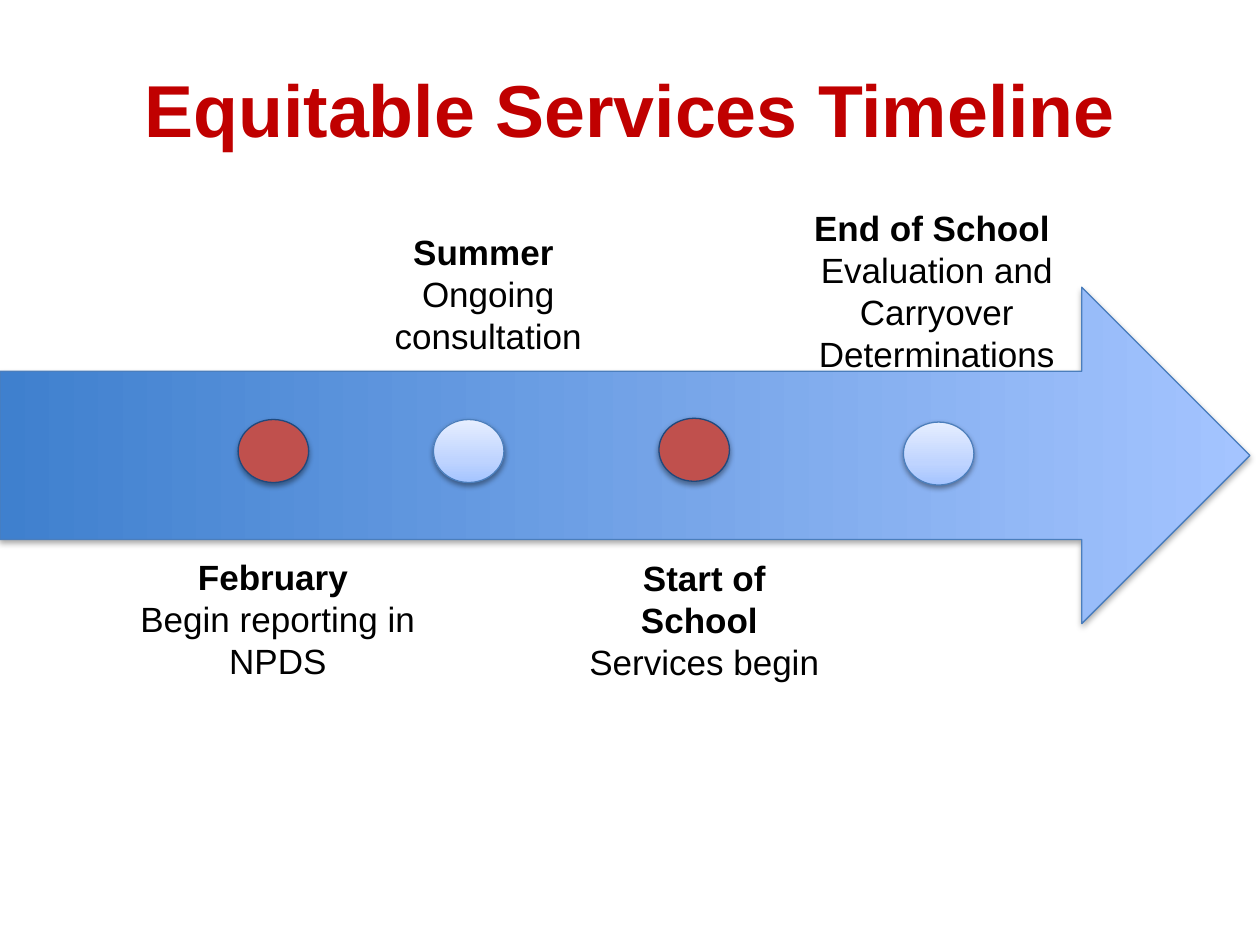
import pptx
import pptx.util
import pptx.dml.color
import pptx.enum.shapes
import pptx.enum.text
import pptx.oxml
import pptx.oxml.ns

# Grid of 100 columns by 75 rows over the slide
SLIDE_WIDTH, SLIDE_HEIGHT = pptx.util.Inches(10), pptx.util.Inches(7.5)
COLUMN, ROW = SLIDE_WIDTH / 100, SLIDE_HEIGHT / 75

FONT = "Arial"
COLORS = {
    "title": "C00000",
    "text": "000000",
    "shadow": "000000",
    "arrow_start": "3F80CE",
    "arrow_end": "A4C4FF",
    "pale_middle": "BFD4FF",
    "pale_end": "E6EEFF",
    "blue_line": "4B7EBC",
    "red": "C0504D",
    "navy_line": "1F497D",
}
ARROW_STOPS = [(0, "arrow_start"), (100, "arrow_end")]
PALE_STOPS = [(0, "arrow_end"), (35, "pale_middle"), (100, "pale_end")]
MARKER_SIZE = (5.6, 5)

# Markers and labels are (left, top[, width, height]) within the timeline box
MILESTONES = [
    {"heading": "February ", "detail": "Begin reporting in NPDS", "red": True,
     "marker": (18.9, 10.5), "label": (9.3, 21.3, 25.5, 6.8)},
    {"heading": "Summer ", "detail": "Ongoing consultation", "red": False,
     "marker": (34.4, 10.5), "label": (27.5, -4.5, 22.5, 8.8)},
    {"heading": "Start of School ", "detail": "Services begin", "red": True,
     "marker": (52.3, 10.4), "label": (46.1, 21.4, 19.6, 12.5)},
    {"heading": "End of School ", "detail": "Evaluation and Carryover Determinations",
     "red": False, "marker": (71.7, 10.7), "label": (63.1, -6.4, 22.5, 11)},
]


def rgb(name):
    return pptx.dml.color.RGBColor.from_string(COLORS[name])


def to_lengths(left, top, width, height):
    return [round(value * unit) for value, unit in
            zip((left, top, width, height), (COLUMN, ROW, COLUMN, ROW))]


def write_text(text_frame, lines, size, color, anchor):
    """Write centred lines, each a (text, bold) pair."""
    text_frame.word_wrap = True
    text_frame.vertical_anchor = anchor
    text_frame.margin_left = text_frame.margin_right = 0
    text_frame.margin_top = text_frame.margin_bottom = 0
    for index, (text, bold) in enumerate(lines):
        paragraph = text_frame.add_paragraph() if index else text_frame.paragraphs[0]
        paragraph.alignment = pptx.enum.text.PP_ALIGN.CENTER
        run = paragraph.add_run()
        run.text = text
        run.font.name = FONT
        run.font.size = pptx.util.Pt(size)
        run.font.bold = bold
        run.font.color.rgb = rgb(color)


def fill_gradient(shape, stops):
    """Fill from the shape's bottom to its top with any number of stops."""
    shape.fill.gradient()
    shape.fill.gradient_angle = 90
    stop_list = shape._element.spPr.find(".//" + pptx.oxml.ns.qn("a:gsLst"))
    for stop in list(stop_list):
        stop_list.remove(stop)
    for position, name in stops:
        stop_list.append(pptx.oxml.parse_xml(
            f'<a:gs {pptx.oxml.ns.nsdecls("a")} pos="{position * 1000}">'
            f'<a:srgbClr val="{COLORS[name]}"/></a:gs>'))


def add_shadow(shape, opacity, distance):
    shape.shadow.inherit = False
    effects = shape._element.spPr.find(pptx.oxml.ns.qn("a:effectLst"))
    effects.append(pptx.oxml.parse_xml(
        f'<a:outerShdw {pptx.oxml.ns.nsdecls("a")} blurRad="{pptx.util.Pt(3.1)}" '
        f'dist="{pptx.util.Pt(distance)}" dir="5400000" rotWithShape="0">'
        f'<a:srgbClr val="{COLORS["shadow"]}"><a:alpha val="{opacity * 1000}"/>'
        '</a:srgbClr></a:outerShdw>'))


def add_figure(slide, kind, box, line, fill=None, stops=None, opacity=38, distance=1.6):
    shape = slide.shapes.add_shape(kind, *to_lengths(*box))
    if stops:
        fill_gradient(shape, stops)
    else:
        shape.fill.solid()
        shape.fill.fore_color.rgb = rgb(fill)
    shape.line.color.rgb = rgb(line)
    shape.line.width = pptx.util.Pt(0.75)
    add_shadow(shape, opacity, distance)
    return shape


def add_title(slide, box, text):
    title = slide.shapes.title
    title.left, title.top, title.width, title.height = to_lengths(*box)
    write_text(title.text_frame, [(text, True)], size=42, color="title",
               anchor=pptx.enum.text.MSO_ANCHOR.MIDDLE)
    title.text_frame.auto_size = pptx.enum.text.MSO_AUTO_SIZE.SHAPE_TO_FIT_TEXT


def add_arrow(slide, box):
    """Turn an up arrow a quarter so that it fills the box from left to right."""
    left, top, width, height = box
    upright = (left + (width - height) / 2, top + (height - width) / 2, height, width)
    arrow = add_figure(slide, pptx.enum.shapes.MSO_SHAPE.UP_ARROW, upright,
                       line="blue_line", stops=ARROW_STOPS, opacity=35, distance=1.8)
    arrow.rotation = 90


def add_milestone(slide, origin, milestone):
    left, top = origin
    # Marker on the arrow
    marker_left, marker_top = milestone["marker"]
    style = ({"fill": "red", "line": "navy_line"} if milestone["red"]
             else {"stops": PALE_STOPS, "line": "blue_line"})
    add_figure(slide, pptx.enum.shapes.MSO_SHAPE.FLOWCHART_CONNECTOR,
               (left + marker_left, top + marker_top, *MARKER_SIZE), **style)
    # Label above or below the arrow
    label_left, label_top, width, height = milestone["label"]
    label = slide.shapes.add_textbox(
        *to_lengths(left + label_left, top + label_top, width, height))
    write_text(label.text_frame,
               [(milestone["heading"], True), (milestone["detail"], False)],
               size=20, color="text", anchor=pptx.enum.text.MSO_ANCHOR.TOP)


def add_timeline(slide, box):
    add_arrow(slide, box)
    for milestone in MILESTONES:
        add_milestone(slide, box[:2], milestone)


def main():
    presentation = pptx.Presentation()
    presentation.slide_width, presentation.slide_height = SLIDE_WIDTH, SLIDE_HEIGHT
    slide = presentation.slides.add_slide(presentation.slide_layouts[5])
    add_title(slide, (5, 5, 90, 7.1), "Equitable Services Timeline")
    add_timeline(slide, (0, 22.8, 99.2, 26.7))
    presentation.save("out.pptx")


if __name__ == "__main__":
    main()
